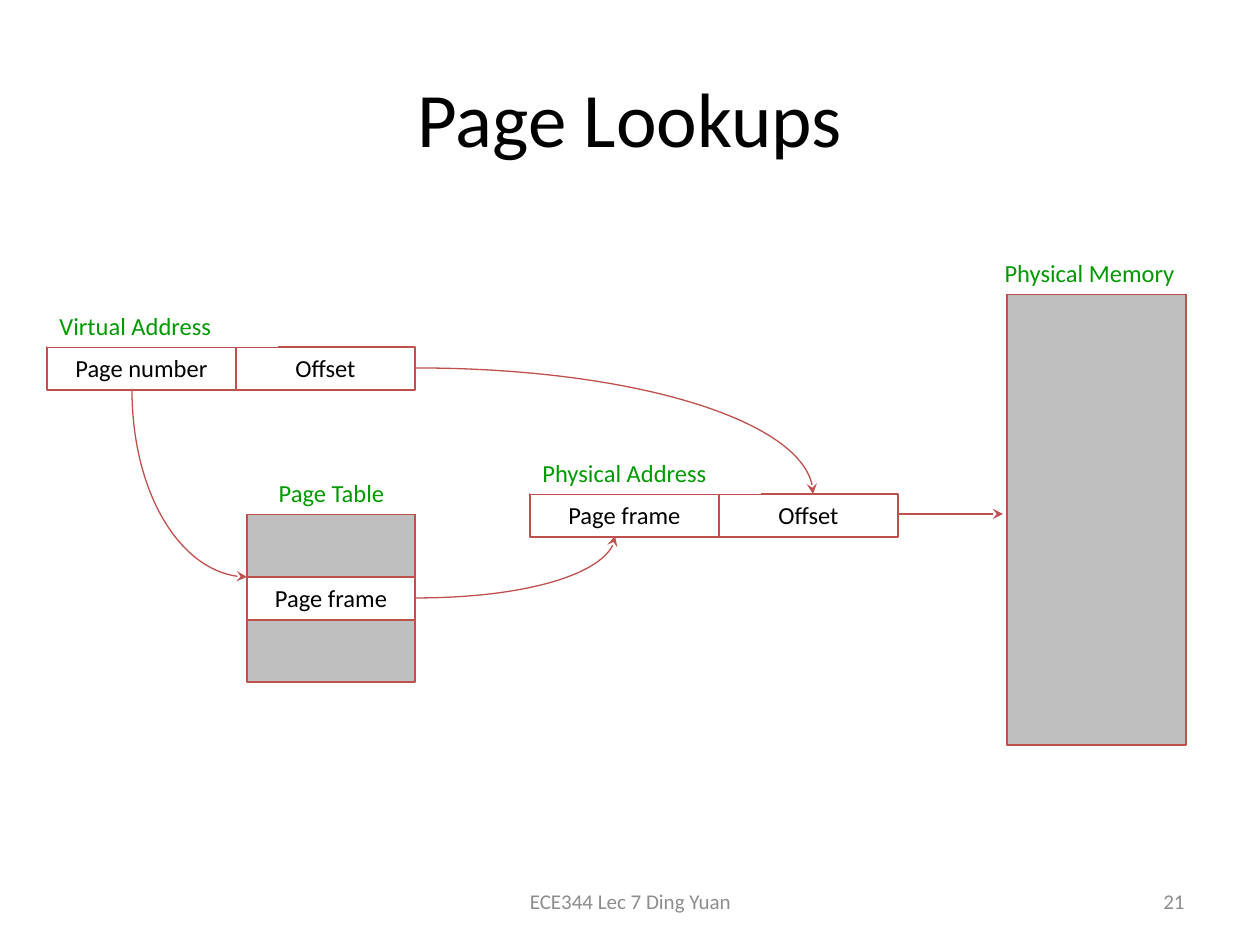
from dataclasses import dataclass

from lxml import etree
from pptx import Presentation
from pptx import util as u
from pptx.dml.color import RGBColor
from pptx.enum import shapes, text
from pptx.oxml import ns

SCALE = u.Inches(1) / 126
KAPPA = 0.55
COLORS = {
    "black": "000000",
    "white": "FFFFFF",
    "gray": "BFBFBF",
    "footer": "8C8C8C",
    "red": "C0504D",
    "green": "009900",
}
LEFT, CENTER, RIGHT = text.PP_ALIGN.LEFT, text.PP_ALIGN.CENTER, text.PP_ALIGN.RIGHT
TOP, MIDDLE = text.MSO_ANCHOR.TOP, text.MSO_ANCHOR.MIDDLE


@dataclass(frozen=True)
class Caption:
    words: str
    left: int
    top: int
    width: int
    height: int
    size: int
    color: str
    align: text.PP_ALIGN = CENTER


@dataclass(frozen=True)
class Box:
    left: int
    top: int
    width: int
    height: int = 43
    words: str = ""
    fill: str = "white"
    line: str = "red"
    color: str = "black"
    align: text.PP_ALIGN = CENTER


@dataclass(frozen=True)
class Curve:
    start: tuple[int, int]
    corner: tuple[int, int]
    end: tuple[int, int]


def px(length: int) -> u.Emu:
    return u.Emu(round(length * SCALE))


def rgb(name: str) -> RGBColor:
    return RGBColor.from_string(COLORS[name])


def write(shape, words: str, size: int, color: str, align, anchor) -> None:
    frame = shape.text_frame
    frame.word_wrap = True
    frame.vertical_anchor = anchor
    frame.text = words
    paragraph = frame.paragraphs[0]
    paragraph.alignment = align
    for run in paragraph.runs:
        run.font.name = "Calibri"
        run.font.size = u.Pt(size)
        run.font.color.rgb = rgb(color)


def draw_caption(slide, caption: Caption) -> None:
    place = map(px, (caption.left, caption.top, caption.width, caption.height))
    write(slide.shapes.add_textbox(*place), caption.words, caption.size,
          caption.color, caption.align, MIDDLE)


def draw_box(slide, box: Box) -> None:
    place = map(px, (box.left, box.top, box.width, box.height))
    shape = slide.shapes.add_shape(shapes.MSO_SHAPE.RECTANGLE, *place)
    shape.shadow.inherit = False
    shape.fill.solid()
    shape.fill.fore_color.rgb = rgb(box.fill)
    if box.line:
        shape.line.color.rgb = rgb(box.line)
        shape.line.width = u.Pt(0.75)
    else:
        shape.line.fill.background()
    if box.words:
        write(shape, box.words, 14, box.color, box.align, TOP)


def label(words: str, left: int, top: int, width: int = 231, align=CENTER) -> Box:
    return Box(left, top, width, 42, words, line="", color="green", align=align)


def style_arrow(arrow) -> None:
    arrow.line.color.rgb = rgb("red")
    arrow.line.width = u.Pt(0.75)
    outline = arrow.line._get_or_add_ln()
    etree.SubElement(outline, ns.qn("a:tailEnd"), type="stealth")


def draw_curve(slide, curve: Curve) -> None:
    builder = slide.shapes.build_freeform(*curve.start, scale=SCALE)
    builder.add_line_segments([curve.end], close=False)
    shape = builder.convert_to_shape()
    shape.shadow.inherit = False
    shape.fill.background()
    style_arrow(shape)

    segment = next(shape._element.iter(ns.qn("a:lnTo")))
    bezier = etree.Element(ns.qn("a:cubicBezTo"))
    origin = [min(pair) for pair in zip(curve.start, curve.end)]
    for anchor, weight in ((curve.start, KAPPA), (curve.end, KAPPA), (curve.end, 0)):
        x, y = (round(a + weight * (c - a) - o)
                for a, c, o in zip(anchor, curve.corner, origin))
        etree.SubElement(bezier, ns.qn("a:pt"), x=str(x), y=str(y))
    segment.getparent().replace(segment, bezier)


def draw_arrow(slide, start: tuple[int, int], end: tuple[int, int]) -> None:
    arrow = slide.shapes.add_connector(
        shapes.MSO_CONNECTOR.STRAIGHT, *map(px, start + end))
    style_arrow(arrow)
    etree.SubElement(arrow._element.spPr, ns.qn("a:effectLst"))


CAPTIONS = [
    Caption("Page Lookups", 63, 38, 1134, 158, 44, "black"),
    Caption("ECE344 Lec 7 Ding Yuan", 431, 876, 399, 50, 12, "footer"),
    Caption("21", 903, 876, 294, 50, 12, "footer", RIGHT),
]


def address(title: str, first_field: str, left: int, top: int) -> list[Box]:
    return [
        Box(left, top, 189, words=first_field),
        Box(left + 189, top, 179, words="Offset"),
        label(title, left, top - 42, align=LEFT),
    ]


BOXES = [
    Box(1007, 294, 179, 451, fill="gray"),
    Box(247, 514, 168, 168, fill="gray"),
    Box(247, 577, 168, words="Page frame"),
    *address("Virtual Address", "Page number", 47, 347),
    label("Page Table", 237, 472, 189),
    *address("Physical Address", "Page frame", 530, 494),
    label("Physical Memory", 974, 252),
]

CURVES = [
    Curve((415, 368), (814, 368), (813, 494)),
    Curve((132, 389), (132, 577), (247, 577)),
    Curve((415, 598), (615, 598), (615, 536)),
]


def main() -> None:
    deck = Presentation()
    deck.slide_width, deck.slide_height = px(1260), px(945)
    slide = deck.slides.add_slide(deck.slide_layouts[6])
    for caption in CAPTIONS:
        draw_caption(slide, caption)
    for box in BOXES:
        draw_box(slide, box)
    for curve in CURVES:
        draw_curve(slide, curve)
    draw_arrow(slide, (898, 514), (1003, 514))
    deck.save("out.pptx")


if __name__ == "__main__":
    main()
